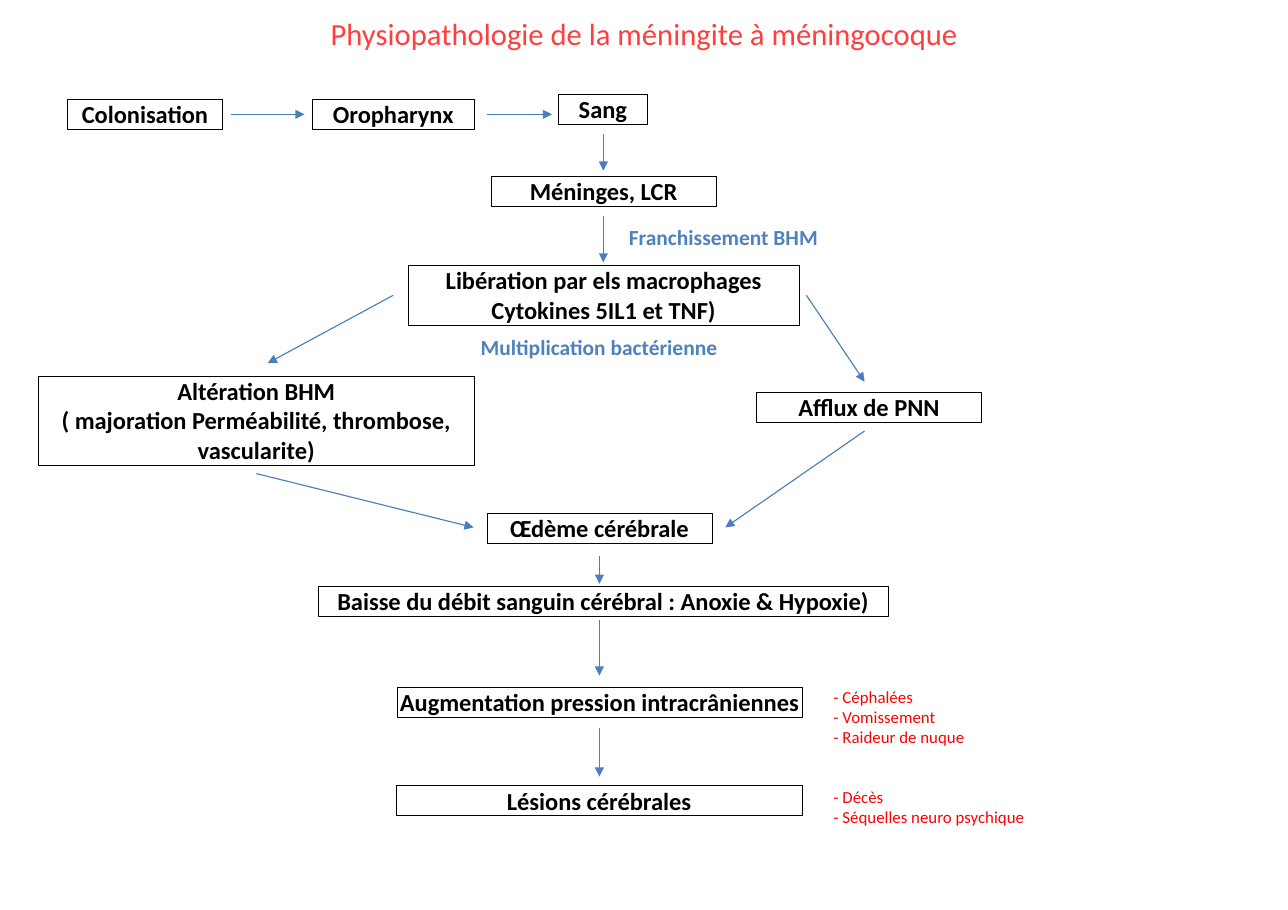
import pptx
import pptx.util
import pptx.dml.color
import pptx.enum.shapes
import pptx.enum.text
import pptx.oxml.ns
import lxml.etree

Pt = pptx.util.Pt
ALIGN = pptx.enum.text.PP_ALIGN
BLACK, BLUE, RED = "000000", "4F81BD", "FF0000"


def tint(color):
    return pptx.dml.color.RGBColor.from_string(color)


def write(shape, text, size, color, bold=False, align=ALIGN.CENTER):
    frame = shape.text_frame
    frame.text = text
    frame.word_wrap = True
    frame.auto_size = pptx.enum.text.MSO_AUTO_SIZE.NONE
    frame.vertical_anchor = pptx.enum.text.MSO_ANCHOR.TOP
    frame.margin_left = frame.margin_right = 0
    frame.margin_top = frame.margin_bottom = 0
    for line in frame.paragraphs:
        line.alignment = align
        line.line_spacing = 1.0
        line.space_before = Pt(0)
        for run in line.runs:
            run.font.name = "Calibri"
            run.font.size = Pt(size)
            run.font.bold = bold
            run.font.color.rgb = tint(color)


deck = pptx.Presentation()
deck.slide_width, deck.slide_height = Pt(841.68), Pt(594.72)
slide = deck.slides.add_slide(deck.slide_layouts[5])

# Title
title = slide.shapes.title
title.left, title.top, title.width, title.height = Pt(75), Pt(9.4), Pt(692), Pt(24.5)
write(title, "Physiopathologie de la méningite à méningocoque", 20, "FF3E3E")

# Boxes of the cascade: left, top, width, lines, text
steps = [
    (44, 65, 101.5, 1, "Colonisation"),
    (204, 65, 106, 1, "Oropharynx"),
    (365, 61.5, 58, 1, "Sang"),
    (321, 115.2, 147, 1, "Méninges, LCR"),
    (267, 173.5, 255, 2, "Libération par els macrophages Cytokines 5IL1 et TNF)"),
    (25, 245.7, 285, 3,
     "Altération BHM\n( majoration Perméabilité, thrombose, vascularite)"),
    (494.4, 256.3, 147, 1, "Afflux de PNN"),
    (318.3, 335.5, 147, 1, "Œdème cérébrale"),
    (208, 383, 372.5, 1, "Baisse du débit sanguin cérébral : Anoxie & Hypoxie)"),
    (259.3, 449.2, 265, 1, "Augmentation pression intracrâniennes"),
    (259, 513.4, 265, 1, "Lésions cérébrales"),
]
for left, top, width, lines, text in steps:
    box = slide.shapes.add_shape(
        pptx.enum.shapes.MSO_SHAPE.RECTANGLE,
        Pt(left), Pt(top), Pt(width), Pt(19.5 * lines))
    box.shadow.inherit = False
    box.fill.background()
    box.line.color.rgb = tint(BLACK)
    box.line.width = Pt(0.25)
    write(box, text, 16, BLACK, bold=True)

# Blue captions and red signs
notes = [
    (399.3, 146.2, 147, 17, "Franchissement BHM", 14, BLUE, True, ALIGN.CENTER),
    (300, 218.5, 183, 17, "Multiplication bactérienne", 14, BLUE, True, ALIGN.CENTER),
    (544.7, 448.5, 158.4, 40, "- Céphalées\n- Vomissement\n- Raideur de nuque",
     11, RED, False, ALIGN.LEFT),
    (544.7, 514.2, 158.4, 27, "- Décès\n- Séquelles neuro psychique",
     11, RED, False, ALIGN.LEFT),
]
for left, top, width, height, text, size, color, bold, align in notes:
    note = slide.shapes.add_textbox(Pt(left), Pt(top), Pt(width), Pt(height))
    write(note, text, size, color, bold, align)

# Arrows: start x, start y, end x, end y
links = [
    (151, 74.7, 199, 74.7),
    (318.3, 74.7, 360.7, 74.7),
    (394.3, 87.7, 394.3, 111.5),
    (394.3, 141.5, 394.3, 171.5),
    (257, 193, 175, 237.3),
    (527, 193, 565, 249.5),
    (167.5, 309.5, 309.5, 344.7),
    (565, 281.7, 474, 344.7),
    (391.7, 363.7, 391.7, 381.5),
    (391.7, 405.3, 391.7, 441.5),
    (391.7, 476, 391.7, 507.5),
]
for ends in links:
    link = slide.shapes.add_connector(
        pptx.enum.shapes.MSO_CONNECTOR.STRAIGHT, *map(Pt, ends))
    link.line.color.rgb = tint("4B7EBC")
    link.line.width = Pt(0.75)
    props = link.line._get_or_add_ln()
    lxml.etree.SubElement(props, pptx.oxml.ns.qn("a:tailEnd"), type="triangle")
    lxml.etree.SubElement(props.getparent(), pptx.oxml.ns.qn("a:effectLst"))

deck.save("out.pptx")
